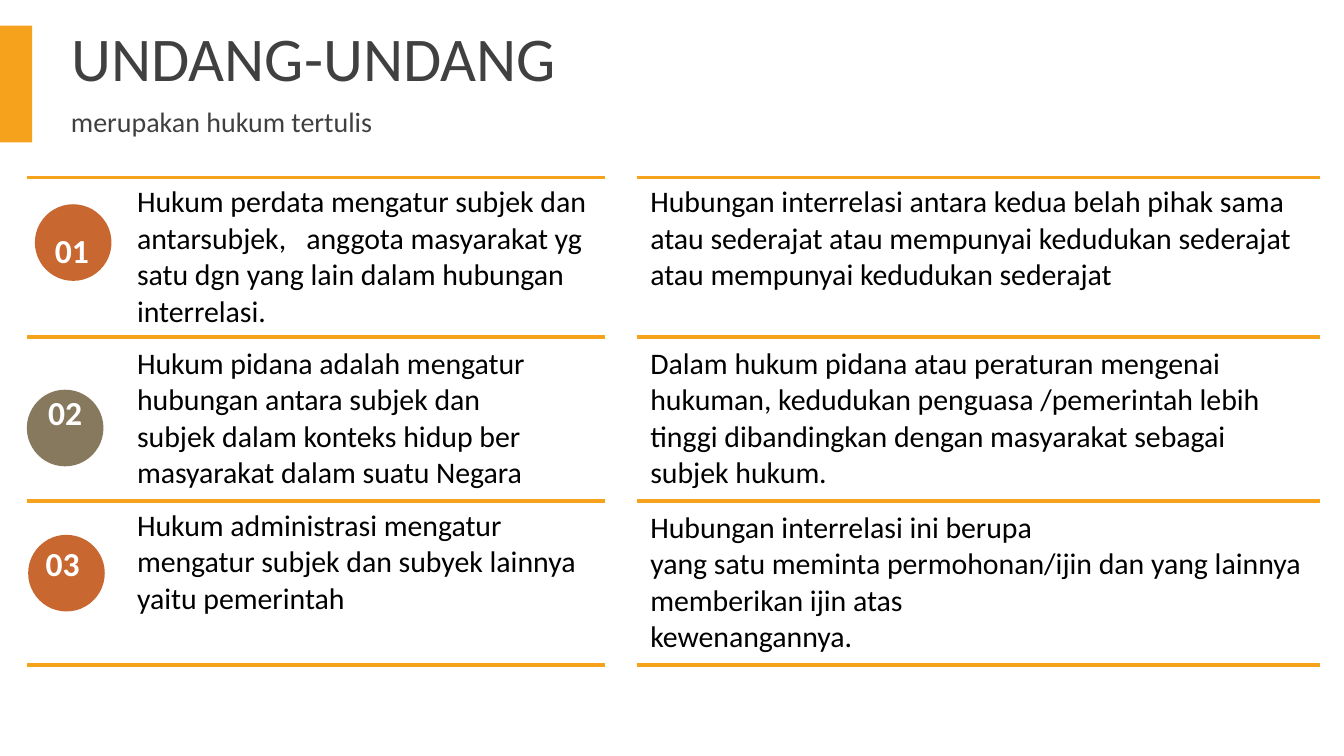
"""Build a slide that compares three branches of written law."""
from dataclasses import dataclass

from lxml import etree
from pptx import Presentation
from pptx import util as u
from pptx.dml.color import RGBColor
from pptx.enum import shapes, text
from pptx.oxml import ns

WIDTH = u.Inches(10)
HEIGHT = WIDTH * 9 // 16
ORANGE = RGBColor(0xF6, 0xA2, 0x1D)
RUST = RGBColor(0xC9, 0x67, 0x31)
OLIVE = RGBColor(0x87, 0x79, 0x5D)
GREY = RGBColor(0x40, 0x40, 0x40)
BLACK = RGBColor(0, 0, 0)
WHITE = RGBColor(0xFF, 0xFF, 0xFF)
FONT = "Calibri"

TABLE_BOX = [u.Inches(size) for size in (0.2, 1.32, 9.61, 3.6)]
COLUMNS = [u.Inches(size) for size in (0.72, 3.58, 0.23, 5.08)]
ROWS = [u.Inches(size) for size in (1.11, 1.22, 1.22)]
GAP_COLUMN = 2
BADGE = u.Inches(0.57)
TOP, MIDDLE = text.MSO_ANCHOR.TOP, text.MSO_ANCHOR.MIDDLE


@dataclass
class Law:
    """One table row with its numbered badge."""
    number: str
    color: RGBColor
    badge: tuple[float, float]
    label: tuple[float, float]
    rule: str
    relation: str
    anchors: tuple


LAWS = [
    Law("01", RUST, (0.26, 1.52), (0.31, 1.66),
        "Hukum perdata mengatur subjek dan antarsubjek,   anggota masyarakat yg "
        "satu dgn yang lain dalam hubungan interrelasi.",
        "Hubungan interrelasi antara kedua belah pihak sama atau sederajat atau "
        "mempunyai kedudukan sederajat atau mempunyai kedudukan sederajat", (TOP, TOP)),
    Law("02", OLIVE, (0.2, 2.9), (0.26, 2.87),
        "Hukum pidana adalah mengatur hubungan antara subjek dan\v"
        "subjek dalam konteks hidup ber masyarakat dalam suatu Negara",
        "Dalam hukum pidana atau peraturan mengenai hukuman, kedudukan penguasa "
        "/pemerintah lebih tinggi dibandingkan dengan masyarakat sebagai subjek hukum.",
        (MIDDLE, MIDDLE)),
    Law("03", RUST, (0.21, 3.98), (0.24, 3.99),
        "Hukum administrasi mengatur mengatur subjek dan subyek lainnya yaitu pemerintah",
        "Hubungan interrelasi ini berupa\n"
        "yang satu meminta permohonan/ijin dan yang lainnya memberikan ijin atas\n"
        "kewenangannya.", (TOP, MIDDLE)),
]


def write(frame, words: str, size: float, color: RGBColor,
          bold: bool = False, **layout) -> None:
    """Fill a text frame and format every run and paragraph in it."""
    frame.text = words
    for para in frame.paragraphs:
        for name, value in layout.items():
            setattr(para, name, value)
        for span in para.runs:
            for name, value in dict(name=FONT, size=u.Pt(size), bold=bold).items():
                setattr(span.font, name, value)
            span.font.color.rgb = color


def place(box, left: float, top: float, width: float, height: float) -> None:
    """Move and size a shape, in inches."""
    for name, value in dict(left=left, top=top, width=width, height=height).items():
        setattr(box, name, u.Inches(value))


def add_solid(page, kind, left: int, top: int, width: int, height: int,
              color: RGBColor) -> None:
    """Draw a flat shape without an outline."""
    shape = page.shapes.add_shape(kind, left, top, width, height)
    shape.shadow.inherit = False
    shape.fill.solid()
    shape.fill.fore_color.rgb = color
    shape.line.fill.background()


def set_borders(cell, ruled: bool) -> None:
    """Give a cell orange top and bottom lines, or no lines at all."""
    cell.fill.background()
    properties = cell._tc.get_or_add_tcPr()
    for index, side in enumerate(("lnL", "lnR", "lnT", "lnB")):
        line = etree.Element(ns.qn(f"a:{side}"), w=str(u.Pt(2.25)))
        if ruled and side in ("lnT", "lnB"):
            fill = etree.SubElement(line, ns.qn("a:solidFill"))
            etree.SubElement(fill, ns.qn("a:srgbClr"), val=str(ORANGE))
        else:
            etree.SubElement(line, ns.qn("a:noFill"))
        properties.insert(index, line)


def add_law_table(page) -> None:
    """Draw the two ruled columns of text."""
    table = page.shapes.add_table(len(LAWS), len(COLUMNS), *TABLE_BOX).table
    table.first_row = table.horz_banding = False
    for column, width in zip(table.columns, COLUMNS):
        column.width = width
    for row, height, law in zip(table.rows, ROWS, LAWS):
        row.height = height
        for index, cell in enumerate(row.cells):
            set_borders(cell, index != GAP_COLUMN)
        for index, words, anchor in zip((1, 3), (law.rule, law.relation), law.anchors):
            cell = row.cells[index]
            cell.vertical_anchor = anchor
            write(cell.text_frame, words, 16, BLACK)


def add_badge(page, law: Law) -> None:
    """Draw the disc behind a number."""
    left, top = map(u.Inches, law.badge)
    add_solid(page, shapes.MSO_SHAPE.OVAL, left, top, BADGE, BADGE, law.color)


def add_number(page, law: Law) -> None:
    """Write the number of a row."""
    box = page.shapes.add_textbox(0, 0, 0, 0)
    place(box, *law.label, 0.48, 0.4)
    frame = box.text_frame
    frame.word_wrap = False
    frame.auto_size = text.MSO_AUTO_SIZE.SHAPE_TO_FIT_TEXT
    frame.vertical_anchor = MIDDLE
    write(frame, law.number, 18, WHITE, bold=True)


def add_heading(box, words: str, top: float, height: float, size: float,
                spacing: float) -> None:
    """Format the title or the line under it."""
    place(box, 0.43, top, 7.64, height)
    frame = box.text_frame
    frame.word_wrap = True
    frame.auto_size = text.MSO_AUTO_SIZE.NONE
    frame.vertical_anchor = MIDDLE
    write(frame, words, size, GREY, alignment=text.PP_ALIGN.LEFT,
          line_spacing=spacing, space_before=u.Pt(7.5))


def main() -> None:
    """Build and save the deck."""
    deck = Presentation()
    deck.slide_width, deck.slide_height = WIDTH, HEIGHT
    page = deck.slides.add_slide(deck.slide_layouts.get_by_name("Title Only"))
    add_solid(page, shapes.MSO_SHAPE.RECTANGLE, 0, u.Inches(0.19),
              u.Inches(0.24), u.Inches(0.87), ORANGE)
    add_law_table(page)
    add_heading(page.shapes.title, "UNDANG-UNDANG", 0.14, 0.63, 33.3, 0.9)
    add_heading(page.shapes.add_textbox(0, 0, 0, 0), "merupakan hukum tertulis",
                0.77, 0.31, 15, 0.8)
    for draw in (add_badge, add_number):
        for law in LAWS:
            draw(page, law)
    deck.save("out.pptx")


if __name__ == "__main__":
    main()
